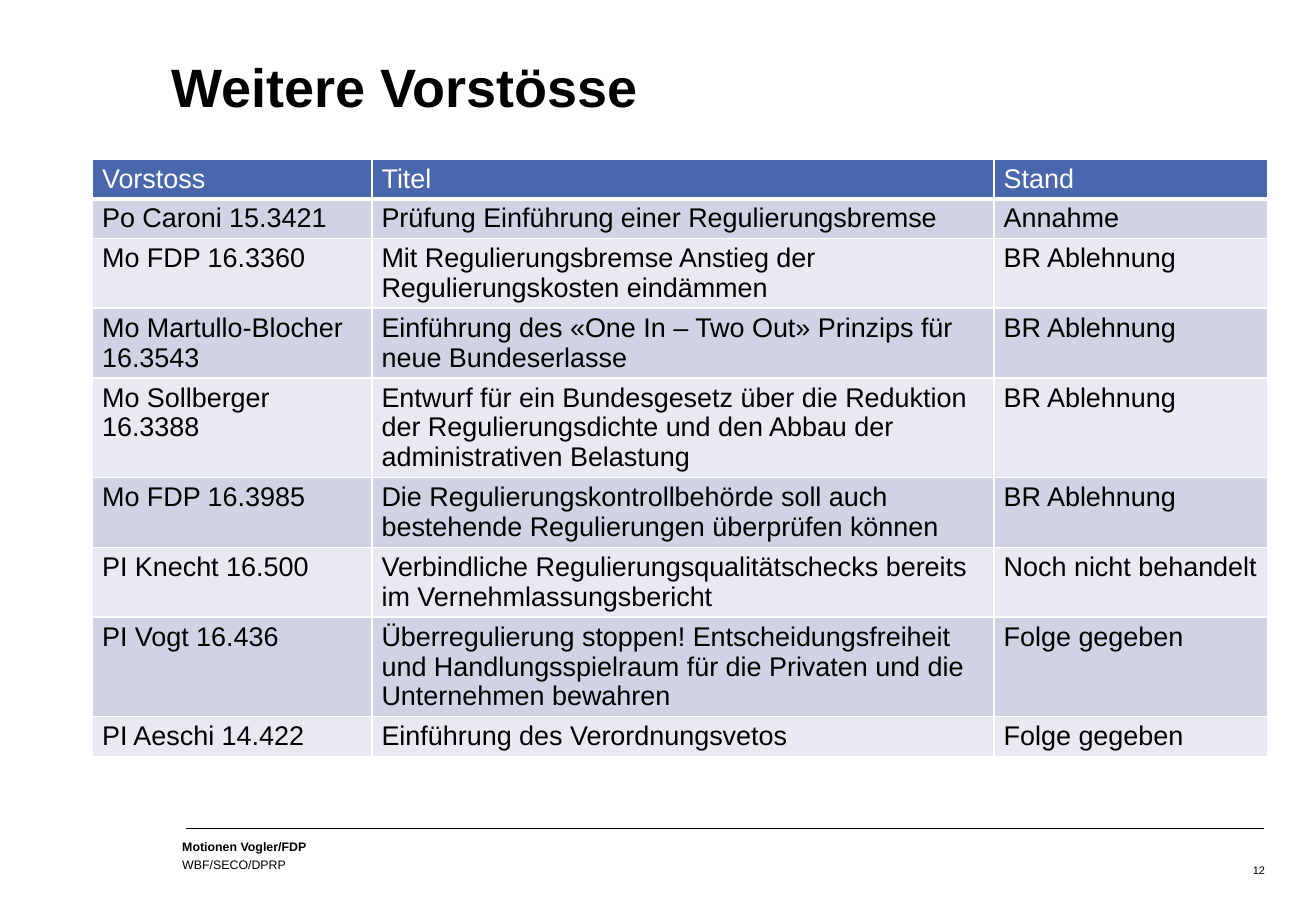
from dataclasses import dataclass

from lxml.etree import SubElement
from pptx import Presentation
from pptx.dml.color import RGBColor as Rgb
from pptx.enum.shapes import MSO_CONNECTOR as Connector
from pptx.enum.text import MSO_ANCHOR as Anchor, PP_ALIGN as Align
from pptx.oxml import parse_xml
from pptx.oxml.ns import nsdecls, qn
from pptx.util import Inches, Pt


@dataclass(frozen=True)
class Theme:
    font: str = "Arial"
    ink: str = "000000"
    paper: str = "FFFFFF"
    header: str = "4A66AC"
    bands: tuple = ("D0D3E3", "E9EAF1")
    title_size: float = 32
    table_size: float = 16
    footer_size: float = 7.3
    number_size: float = 6.5


THEME = Theme()
COLUMN_SHARES = (21.24, 47.28, 20.78)
# Each row: number of text lines, then the three cell texts
ROWS = (
    (1, "Vorstoss", "Titel", "Stand"),
    (1, "Po Caroni 15.3421", "Prüfung Einführung einer Regulierungsbremse", "Annahme"),
    (2, "Mo FDP 16.3360",
     "Mit Regulierungsbremse Anstieg der Regulierungskosten eindämmen", "BR Ablehnung"),
    (2, "Mo Martullo-Blocher 16.3543",
     "Einführung des «One In – Two Out» Prinzips für neue Bundeserlasse", "BR Ablehnung"),
    (3, "Mo Sollberger 16.3388",
     "Entwurf für ein Bundesgesetz über die Reduktion der Regulierungsdichte "
     "und den Abbau der administrativen Belastung", "BR Ablehnung"),
    (2, "Mo FDP 16.3985",
     "Die Regulierungskontrollbehörde soll auch bestehende Regulierungen "
     "überprüfen können", "BR Ablehnung"),
    (2, "PI Knecht 16.500",
     "Verbindliche Regulierungsqualitätschecks bereits im Vernehmlassungsbericht",
     "Noch nicht behandelt"),
    (3, "PI Vogt 16.436",
     "Überregulierung stoppen! Entscheidungsfreiheit und Handlungsspielraum "
     "für die Privaten und die Unternehmen bewahren", "Folge gegeben"),
    (1, "PI Aeschi 14.422", "Einführung des Verordnungsvetos", "Folge gegeben"),
)

deck = Presentation()
deck.slide_width, deck.slide_height = Inches(10.83), Inches(7.5)
page = deck.slides.add_slide(deck.slide_layouts.get_by_name("Title Only"))


def share(left, top, width, height):
    """Turn percentages of the slide's size into lengths."""
    across, down = deck.slide_width / 100, deck.slide_height / 100
    return [int(left * across), int(top * down), int(width * across), int(height * down)]


def style(para, size, color=THEME.ink, bold=False):
    for span in para.runs:
        span.font.name, span.font.size, span.font.bold = THEME.font, Pt(size), bold
        span.font.color.rgb = Rgb.from_string(color)


# Title
title = page.shapes.title
title.left, title.top, title.width, title.height = share(12.19, 4.53, 83.01, 9.73)
frame = title.text_frame
frame.text = "Weitere Vorstösse"
frame.margin_left = frame.margin_right = Inches(0.09)
frame.vertical_anchor = Anchor.MIDDLE
frame.paragraphs[0].alignment = Align.LEFT
style(frame.paragraphs[0], THEME.title_size, bold=True)

# Table
table = page.shapes.add_table(
    len(ROWS), len(COLUMN_SHARES), *share(7.02, 17.47, sum(COLUMN_SHARES), 66)).table
for column, width in zip(table.columns, COLUMN_SHARES):
    column.width = share(0, 0, width, 0)[2]
for index, (lines, *texts) in enumerate(ROWS):
    is_header = index == 0
    table.rows[index].height = Pt(17.6) * lines + Inches(0.08)
    for cell, text in zip(table.rows[index].cells, texts):
        cell.text = text
        cell.margin_left, cell.margin_right = Inches(0.08), Inches(0.07)
        cell.margin_top = cell.margin_bottom = Inches(0.04)
        style(cell.text_frame.paragraphs[0], THEME.table_size,
              THEME.paper if is_header else THEME.ink)
        properties = cell._tc.get_or_add_tcPr()
        for side in ("lnL", "lnR", "lnT", "lnB"):
            heavy = (is_header and side == "lnB") or (index == 1 and side == "lnT")
            properties.append(parse_xml(
                f'<a:{side} {nsdecls("a")} w="{Pt(3 if heavy else 1)}"><a:solidFill>'
                f'<a:srgbClr val="{THEME.paper}"/></a:solidFill></a:{side}>'))
        cell.fill.solid()
        cell.fill.fore_color.rgb = Rgb.from_string(
            THEME.header if is_header else THEME.bands[(index - 1) % 2])

# Footer rule
left, top, width, _ = share(14.13, 90.93, 81.9, 0)
rule = page.shapes.add_connector(Connector.STRAIGHT, left, top, left + width, top)
rule.line.color.rgb = Rgb.from_string(THEME.ink)
rule.line.width = Pt(0.75)
SubElement(rule._element.spPr, qn("a:effectLst"))

# Footer text
footer = page.shapes.add_textbox(*share(13.11, 91.87, 32.32, 4.4)).text_frame
footer.word_wrap = True
footer.margin_left = footer.margin_right = Inches(0.08)
footer.margin_top = footer.margin_bottom = Inches(0.04)
footer.text = "Motionen Vogler/FDP\nWBF/SECO/DPRP"
for index, para in enumerate(footer.paragraphs):
    para.line_spacing = 0.8
    para.space_before = Pt(4 * index)
    style(para, THEME.footer_size, bold=index == 0)

# Page number
number = page.shapes.add_textbox(*share(72.58, 94.13, 24.38, 4.67)).text_frame
number.word_wrap = True
number.margin_left = number.margin_right = Inches(0.09)
number.text = "12"
number.paragraphs[0].alignment = Align.RIGHT
style(number.paragraphs[0], THEME.number_size)

deck.save("out.pptx")
